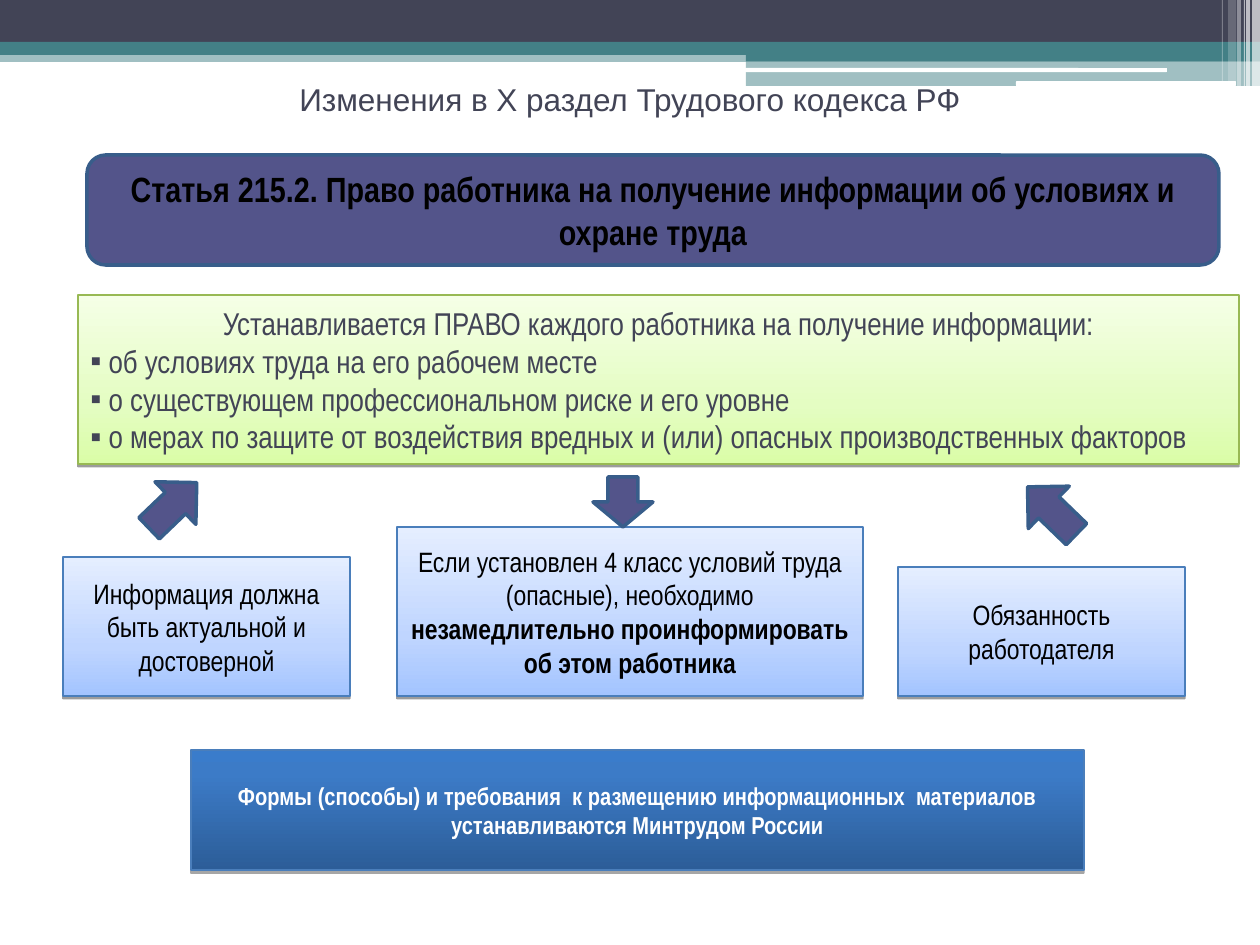
from lxml.etree import SubElement
from pptx import Presentation
from pptx.dml.color import RGBColor as RGB
from pptx.enum.shapes import MSO_SHAPE as SHAPE
from pptx.enum.text import MSO_ANCHOR as ANCHOR, PP_ALIGN as ALIGN
from pptx.oxml.ns import qn
from pptx.util import Emu, Pt

SCALE = 914400 / 126  # EMU in one px

SLATE = RGB(0x42, 0x44, 0x56)
TEAL = RGB(0x43, 0x80, 0x86)
VIOLET = RGB(0x53, 0x54, 0x8A)
NAVY = RGB(0x38, 0x5D, 0x8A)
BLUE = RGB(0x4A, 0x7E, 0xBB)
GREEN = RGB(0x98, 0xB9, 0x54)
BLACK = RGB(0, 0, 0)
WHITE = RGB(0xFF, 0xFF, 0xFF)

# Gradient stops: position in percent, colour
LIME_FADE = [(0, RGB(0xF5, 0xFF, 0xE6)), (65, RGB(0xE4, 0xFD, 0xC2)),
             (100, RGB(0xDA, 0xFD, 0xA7))]
SKY_FADE = [(0, RGB(0xE5, 0xEE, 0xFF)), (65, RGB(0xBF, 0xD5, 0xFF)),
            (100, RGB(0xA3, 0xC4, 0xFF))]
DEEP_FADE = [(0, RGB(0x3A, 0x7C, 0xCB)), (20, RGB(0x3C, 0x7B, 0xC7)),
             (100, RGB(0x2C, 0x5D, 0x98))]


def px(n):
    return Emu(round(n * SCALE))


class Deck:
    """Holds the text style and the current slide."""

    font = "Arial Narrow"

    def __init__(self, width, height):
        self.prs = Presentation()
        self.prs.slide_width, self.prs.slide_height = px(width), px(height)
        self.slide = self.prs.slides.add_slide(self.prs.slide_layouts[5])

    def title(self, box, text, size, color):
        sp = self.slide.shapes.title
        sp.left, sp.top, sp.width, sp.height = map(px, box)
        self.add_text(sp, [(ALIGN.CENTER, None, [(text, False)])], size, color, "Arial")
        self.slide.shapes._spTree.append(sp._element)  # bring to the front

    def shape(self, box, fill, kind=SHAPE.RECTANGLE, alpha=100, line=None,
              width=2, radius=None, turn=0):
        sp = self.slide.shapes.add_shape(kind, *map(px, box))
        sp.shadow.inherit = False
        sp.rotation = turn
        if radius is not None:
            sp.adjustments[0] = radius
        sp.fill.solid()
        sp.fill.fore_color.rgb = fill
        if alpha < 100:
            clr = sp._element.spPr.find(".//" + qn("a:srgbClr"))
            SubElement(clr, qn("a:alpha"), val=str(alpha * 1000))
        if line is None:
            sp.line.fill.background()
        else:
            sp.line.color.rgb = line
            sp.line.width = Pt(width)
        return sp

    def panel(self, box, stops, line, shade=38, drop=1.6):
        """Rectangle with a downward gradient and a soft shadow."""
        sp = self.shape(box, WHITE, line=line, width=0.75)
        sp.fill.gradient()
        sp.fill.gradient_angle = 270
        props = sp._element.spPr
        gs_list = props.find(".//" + qn("a:gsLst"))
        gs_list.clear()
        for pos, color in stops:
            gs = SubElement(gs_list, qn("a:gs"), pos=str(pos * 1000))
            SubElement(gs, qn("a:srgbClr"), val=str(color))
        shadow = SubElement(props.find(qn("a:effectLst")), qn("a:outerShdw"),
                            blurRad="0", dist=str(int(Pt(drop))), dir="5400000",
                            rotWithShape="0")
        clr = SubElement(shadow, qn("a:srgbClr"), val=str(BLACK))
        SubElement(clr, qn("a:alpha"), val=str(shade * 1000))
        return sp

    def add_text(self, sp, paragraphs, size, color, font=None):
        """Each paragraph is (alignment, bullet, [(text, bold), ...])."""
        tf = sp.text_frame
        tf.word_wrap = True
        tf.vertical_anchor = ANCHOR.MIDDLE
        for i, (align, bullet, runs) in enumerate(paragraphs):
            p = tf.add_paragraph() if i else tf.paragraphs[0]
            p.alignment = align
            if bullet:
                props = p._p.get_or_add_pPr()
                SubElement(props, qn("a:buFont"), typeface="Arial")
                SubElement(props, qn("a:buChar"), char=bullet)
            for text, bold in runs:
                r = p.add_run()
                r.text = text
                r.font.name = font or self.font
                r.font.size = Pt(size)
                r.font.bold = bold
                r.font.color.rgb = color

    def centered(self, sp, runs, size, color):
        self.add_text(sp, [(ALIGN.CENTER, None, runs)], size, color)


def main():
    deck = Deck(1260, 945)

    # Header bands
    for box, color, alpha in [((0, 50, 1260, 12), TEAL, 50),
                              ((0, 0, 1260, 43), SLATE, 100),
                              ((0, 42, 1260, 13), TEAL, 100),
                              ((746, 49, 514, 12), TEAL, 100),
                              ((746, 61, 514, 25), TEAL, 50)]:
        deck.shape(box, color, alpha=alpha)
    for box in [(745, 68, 422, 4), (1016, 81, 220, 5)]:
        deck.shape(box, WHITE, SHAPE.ROUNDED_RECTANGLE, radius=0.17)

    # Thin stripes in the corner
    for left, width, height, alpha in [(1252, 8, 86, 65), (1246, 4, 86, 65),
                                       (1244, 1, 86, 60), (1237, 4, 86, 40),
                                       (1228, 8, 81, 20), (1222, 1, 81, 30)]:
        deck.shape((left, 0, width, height), WHITE, alpha=alpha)

    # Rights of the worker
    rights = ["об условиях труда на его рабочем месте",
              "о существующем профессиональном риске и его уровне",
              "о мерах по защите от воздействия вредных и (или) опасных "
              "производственных факторов"]
    lead = "Устанавливается ПРАВО каждого работника на получение информации:"
    deck.add_text(deck.panel((78, 295, 1161, 169), LIME_FADE, GREEN),
                  [(ALIGN.CENTER, None, [(lead, False)])]
                  + [(ALIGN.JUSTIFY, "▪", [(" " + text, False)]) for text in rights],
                  18, SLATE)

    # Article heading
    article = deck.shape((87, 155, 1132, 110), VIOLET, SHAPE.ROUNDED_RECTANGLE,
                         line=NAVY, radius=0.17)
    deck.centered(article, [("Статья 215.2. Право работника на получение информации "
                             "об условиях и охране труда", True)], 20, BLACK)

    # Conditions
    for box, runs in [
        ((63, 557, 287, 139),
         [("Информация должна быть актуальной и достоверной", False)]),
        ((397, 527, 466, 169),
         [("Если установлен 4 класс условий труда (опасные), необходимо ", False),
          ("незамедлительно проинформировать об этом работника", True)]),
        ((898, 567, 287, 129), [("Обязанность работодателя", False)]),
    ]:
        deck.centered(deck.panel(box, SKY_FADE, BLUE), runs, 16, BLACK)

    # Ministry rule
    deck.centered(deck.panel((191, 750, 893, 120), DEEP_FADE, BLUE, 35, 1.8),
                  [("Формы (способы) и требования  к размещению информационных  "
                    "материалов устанавливаются Минтрудом России", True)], 14, WHITE)

    # Arrows
    for box, kind, turn in [((140, 476, 66, 59), SHAPE.RIGHT_ARROW, 316.2),
                            ((1018, 481, 68, 59), SHAPE.RIGHT_ARROW, 224),
                            ((593, 477, 60, 50), SHAPE.DOWN_ARROW, 0)]:
        deck.shape(box, VIOLET, kind, line=NAVY, turn=turn)

    deck.title((63, 62, 1134, 74), "Изменения в Х раздел Трудового кодекса РФ",
               18, SLATE)
    deck.prs.save("out.pptx")


if __name__ == "__main__":
    main()
